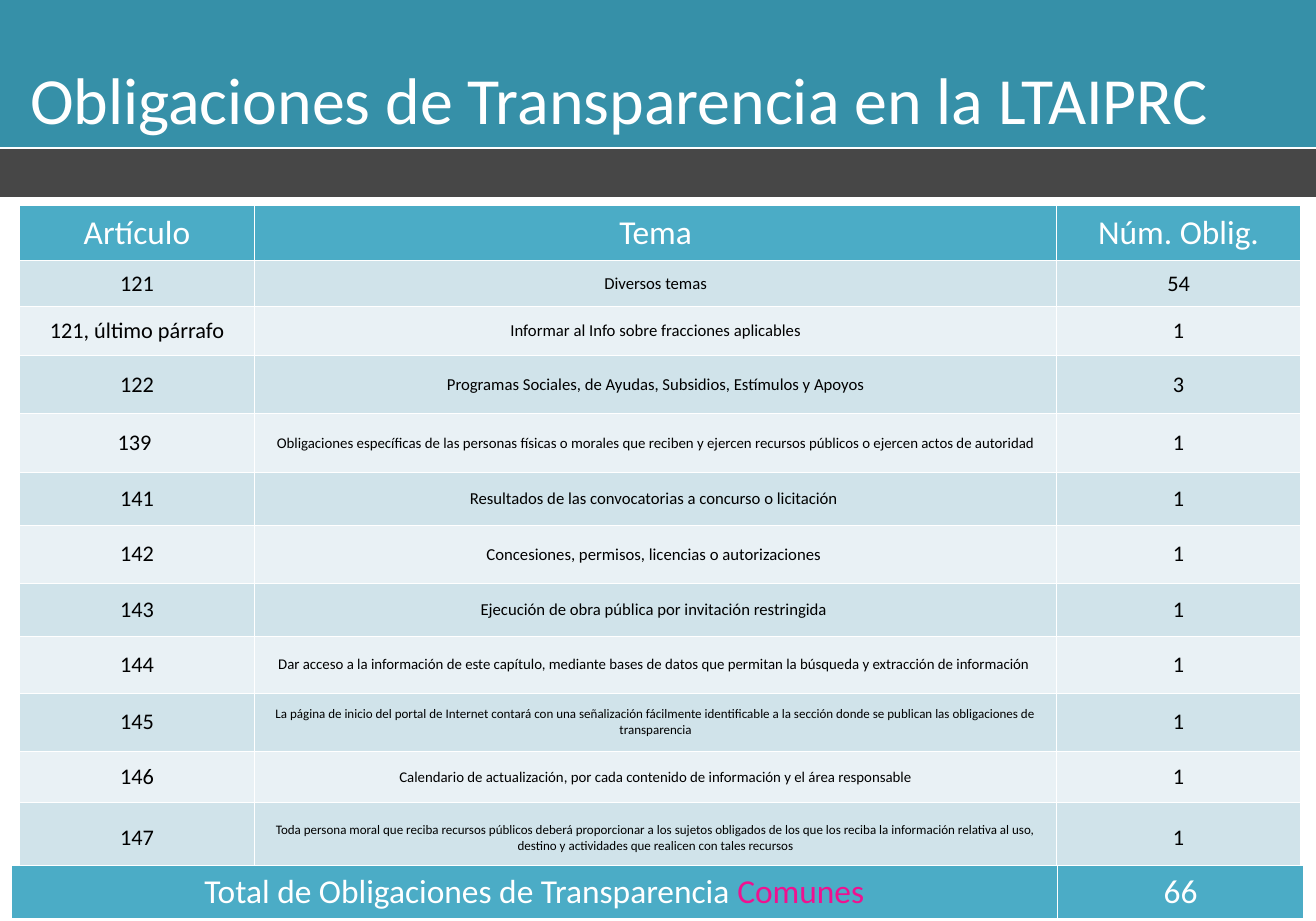
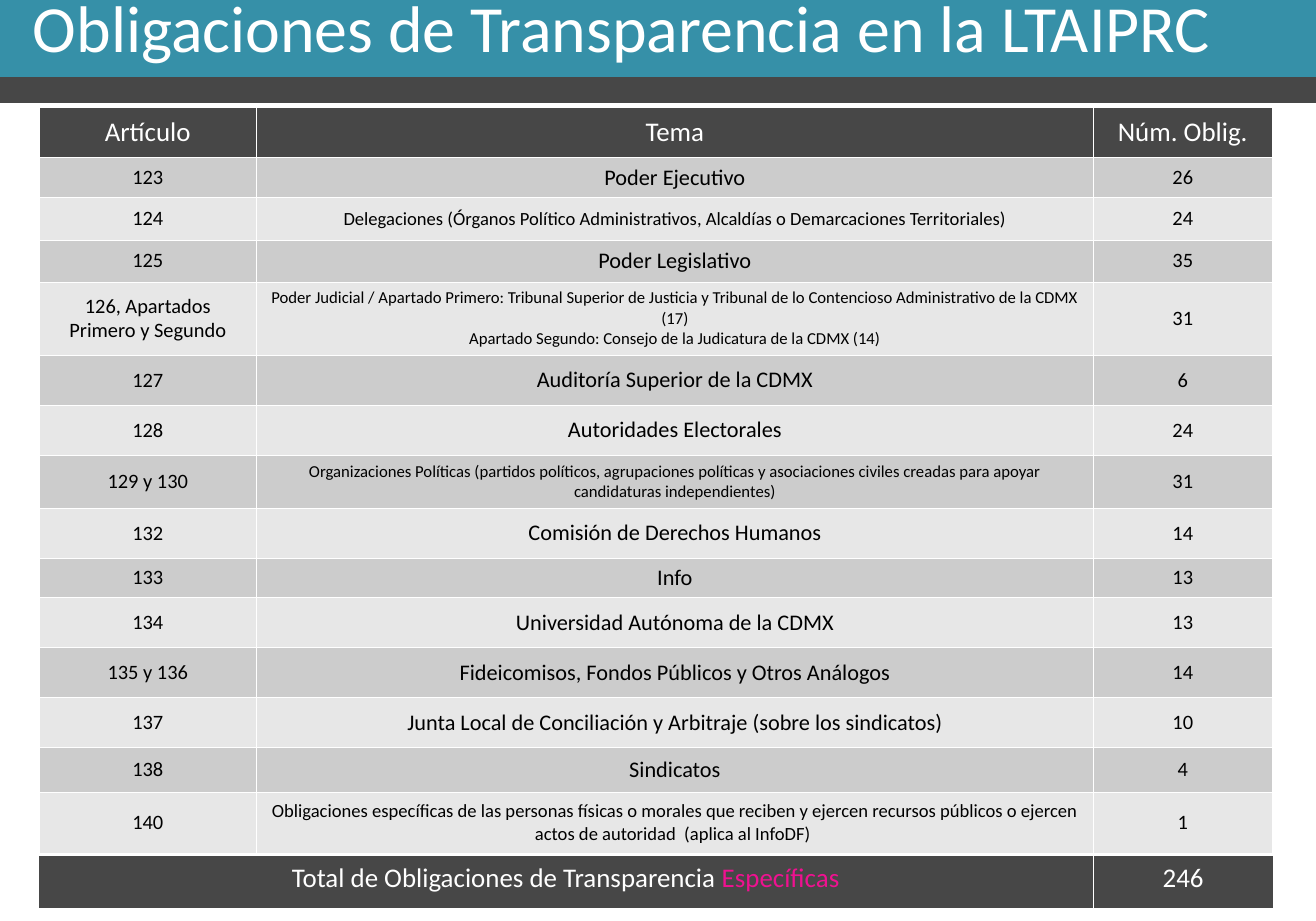
"""Build two slides that list the transparency duties by article."""
from pptx import Presentation
from pptx.dml.color import RGBColor
from pptx.enum.shapes import MSO_SHAPE
from pptx.enum.text import MSO_ANCHOR, MSO_AUTO_SIZE, PP_ALIGN
from pptx.oxml import parse_xml
from pptx.oxml.ns import nsdecls, qn
from pptx.util import Inches, Pt

TEAL = RGBColor(0x36, 0x90, 0xA8)
DARK = RGBColor(0x47, 0x47, 0x47)
AQUA = RGBColor(0x4B, 0xAC, 0xC6)
PINK = RGBColor(0xEF, 0x11, 0x90)
WHITE = RGBColor(0xFF, 0xFF, 0xFF)
BLACK = RGBColor(0, 0, 0)
BLUES = RGBColor(0xD0, 0xE3, 0xEA), RGBColor(0xE9, 0xF1, 0xF5)
GRAYS = RGBColor(0xCC, 0xCC, 0xCC), RGBColor(0xE7, 0xE7, 0xE7)

TITLE = "Obligaciones de Transparencia en la LTAIPRC"
HEADS = "Artículo", "Tema", "Núm. Oblig."
TOTAL = "Total de Obligaciones de Transparencia "

COMMON = [
    (5.01, "121", "Diversos temas", 18, "54"),
    (5.3, "121, último párrafo", "Informar al Info sobre fracciones aplicables", 18, "1"),
    (6.31, "122", "Programas Sociales, de Ayudas, Subsidios, Estímulos y Apoyos", 18, "3"),
    (6.39, "139 ", "Obligaciones específicas de las personas físicas o morales que reciben y "
     "ejercen recursos públicos o ejercen actos de autoridad", 16, "1"),
    (5.73, "141", "Resultados de las convocatorias a concurso o licitación ", 18, "1"),
    (6.31, "142", "Concesiones, permisos, licencias o autorizaciones ", 18, "1"),
    (5.73, "143", "Ejecución de obra pública por invitación restringida ", 18, "1"),
    (6.17, "144", "Dar acceso a la información de este capítulo, mediante bases de datos que "
     "permitan la búsqueda y extracción de información ", 16, "1"),
    (6.39, "145", "La página de inicio del portal de Internet contará con una señalización "
     "fácilmente identificable a la sección donde se publican las obligaciones de "
     "transparencia", 14, "1"),
    (5.52, "146", "Calendario de actualización, por cada contenido de información y el área "
     "responsable", 16, "1"),
    (7.76, "147", "Toda persona moral que reciba recursos públicos deberá proporcionar a los "
     "sujetos obligados de los que los reciba la información relativa al uso, destino y "
     "actividades que realicen con tales recursos", 14, "1"),
]

SPECIAL = [
    (4.43, "123", "Poder Ejecutivo", 24, "26"),
    (4.57, "124", "Delegaciones (Órganos Político Administrativos, Alcaldías o "
     "Demarcaciones Territoriales)", 20, "24"),
    (4.57, "125", "Poder Legislativo", 24, "35"),
    (6.68, "126, Apartados Primero y Segundo", "Poder Judicial / Apartado Primero: Tribunal "
     "Superior de Justicia y Tribunal de lo Contencioso Administrativo de la CDMX (17)\n"
     "Apartado Segundo: Consejo de la Judicatura de la CDMX (14)", 18, "31"),
    (5.44, "127", "Auditoría Superior de la CDMX", 24, "6"),
    (5.44, "128", "Autoridades Electorales", 24, "24"),
    (5.44, "129 y 130", "Organizaciones Políticas (partidos políticos, agrupaciones políticas "
     "y asociaciones civiles creadas para apoyar candidaturas independientes)", 18, "31"),
    (5.44, "132", "Comisión de Derechos Humanos", 24, "14"),
    (3.92, "133", "Info", 24, "13"),
    (5.44, "134", "Universidad Autónoma de la CDMX", 24, "13"),
    (5.44, "135 y 136", "Fideicomisos, Fondos Públicos y Otros Análogos", 24, "14"),
    (5.44, "137", "Junta Local de Conciliación y Arbitraje (sobre los sindicatos)", 24, "10"),
    (4.79, "138", "Sindicatos", 24, "4"),
    (6.68, "140", "Obligaciones específicas de las personas físicas o morales que reciben y "
     "ejercen recursos públicos o ejercen actos de autoridad  (aplica al InfoDF) ", 20, "1"),
]


def write(para, text, size=24, color=BLACK, align=PP_ALIGN.CENTER, font="Calibri"):
    """Add one formatted run to a paragraph."""
    para.alignment = align
    run = para.add_run()
    run.text = text
    run.font.name = font
    run.font.size = Pt(size)
    run.font.bold = False
    run.font.color.rgb = color


class Deck:
    """Hold the style and the current slide, with places in percent of its size."""

    def __init__(self):
        """Open a blank deck of the right size."""
        self.show = Presentation()
        self.show.slide_width = Inches(19.69)
        self.show.slide_height = Inches(13.78)
        self.slide = None

    def wide(self, share):
        """Turn a share of the width into a length."""
        return round(self.show.slide_width * share / 100)

    def tall(self, share):
        """Turn a share of the height into a length."""
        return round(self.show.slide_height * share / 100)

    def start(self):
        """Add a slide with only a title."""
        self.slide = self.show.slides.add_slide(self.show.slide_layouts[5])

    def band(self, top, height, color):
        """Draw a strip across the slide."""
        strip = self.slide.shapes.add_shape(
            MSO_SHAPE.RECTANGLE, 0, self.tall(top), self.wide(100), self.tall(height))
        strip.shadow.inherit = False
        strip.fill.solid()
        strip.fill.fore_color.rgb = color
        strip.line.color.rgb = color
        strip.line.width = Pt(2)

    def title(self, left, top):
        """Set the title in front of the bands."""
        title = self.slide.shapes.title
        self.slide.shapes.element.append(title.element)
        title.left, title.top = self.wide(left), self.tall(top)
        title.width, title.height = self.wide(98.22), self.tall(15.09)
        frame = title.text_frame
        frame.word_wrap = True
        frame.auto_size = MSO_AUTO_SIZE.NONE
        frame.vertical_anchor = MSO_ANCHOR.MIDDLE
        frame.margin_left = frame.margin_right = Inches(0.16)
        frame.margin_top = frame.margin_bottom = Inches(0.08)
        frame.paragraphs[0].line_spacing = 0.9
        write(frame.paragraphs[0], TITLE, size=71, color=WHITE, align=PP_ALIGN.LEFT)

    def grid(self, left, top, cols, rows):
        """Add a bare table with the given column and row shares."""
        frame = self.slide.shapes.add_table(
            len(rows), len(cols), self.wide(left), self.tall(top),
            self.wide(sum(cols)), self.tall(sum(rows)))
        table = frame.table
        table.horz_banding = False
        for col, share in zip(table.columns, cols):
            col.width = self.wide(share)
        for row, share in zip(table.rows, rows):
            row.height = self.tall(share)
        return frame

    def cell(self, cell, parts, fill, anchor=MSO_ANCHOR.MIDDLE, **style):
        """Fill a cell with runs, each a text and its own colour."""
        cell.margin_left = cell.margin_right = Inches(0.15)
        cell.margin_top = cell.margin_bottom = Inches(0.09)
        cell.vertical_anchor = anchor
        cell.fill.solid()
        cell.fill.fore_color.rgb = fill
        para = cell.text_frame.paragraphs[0]
        for text, color in parts:
            first, *rest = text.split("\n")
            write(para, first, color=color, **style)
            for line in rest:
                write(cell.text_frame.add_paragraph(), line, color=color, **style)

    def rule(self, frame):
        """Draw thin white borders around each cell."""
        for props in frame.element.iter(qn("a:tcPr")):
            for spot, side in enumerate("LRTB"):
                props.insert(spot, parse_xml(
                    f'<a:ln{side} {nsdecls("a")} w="12700"><a:solidFill>'
                    f'<a:srgbClr val="{WHITE}"/></a:solidFill></a:ln{side}>'))

    def duties(self, left, top, cols, head, data, fill, tints, big, size):
        """Add the table of articles, topics and counts."""
        frame = self.grid(left, top, cols, [head] + [row[0] for row in data])
        table = frame.table
        for col, text in enumerate(HEADS):
            self.cell(table.cell(0, col), [(text, WHITE)], fill, size=big)
        for row, (_, code, topic, small, count) in enumerate(data, 1):
            tint = tints[(row - 1) % 2]
            for col, (text, pts) in enumerate([(code, size), (topic, small), (count, size)]):
                self.cell(table.cell(row, col), [(text, BLACK)], tint, size=pts)
        self.rule(frame)

    def total(self, left, top, cols, height, kind, count, fill, size):
        """Add the closing row with the sum."""
        frame = self.grid(left, top, cols, [height])
        texts = [(TOTAL, WHITE), (kind, PINK)], [(count, WHITE)]
        for col, parts in enumerate(texts):
            self.cell(frame.table.cell(0, col), parts, fill, MSO_ANCHOR.TOP, size=size)
        self.rule(frame)


def main():
    """Build and save both slides."""
    deck = Deck()

    deck.start()
    deck.band(0, 15.89, TEAL)
    deck.band(16.26, 5.01, DARK)
    deck.title(1.47, 3.63)
    deck.duties(1.47, 22.35, (17.88, 60.94, 18.54), 5.95, COMMON, AQUA, BLUES, 36, 24)
    deck.total(0.86, 93.98, (79.48, 18.74), 5.66, "Comunes", "66", AQUA, 36)

    deck.start()
    deck.band(-6.31, 15.89, TEAL)
    deck.band(8.42, 2.69, DARK)
    deck.title(1.68, -4.21)
    deck.duties(3, 11.61, (16.46, 63.64, 13.56), 5.44, SPECIAL, DARK, GRAYS, 29, 22)
    deck.total(2.89, 92.89, (80.19, 13.66), 5.73, "Específicas", "246", DARK, 29)

    deck.show.save("out.pptx")


if __name__ == "__main__":
    main()
